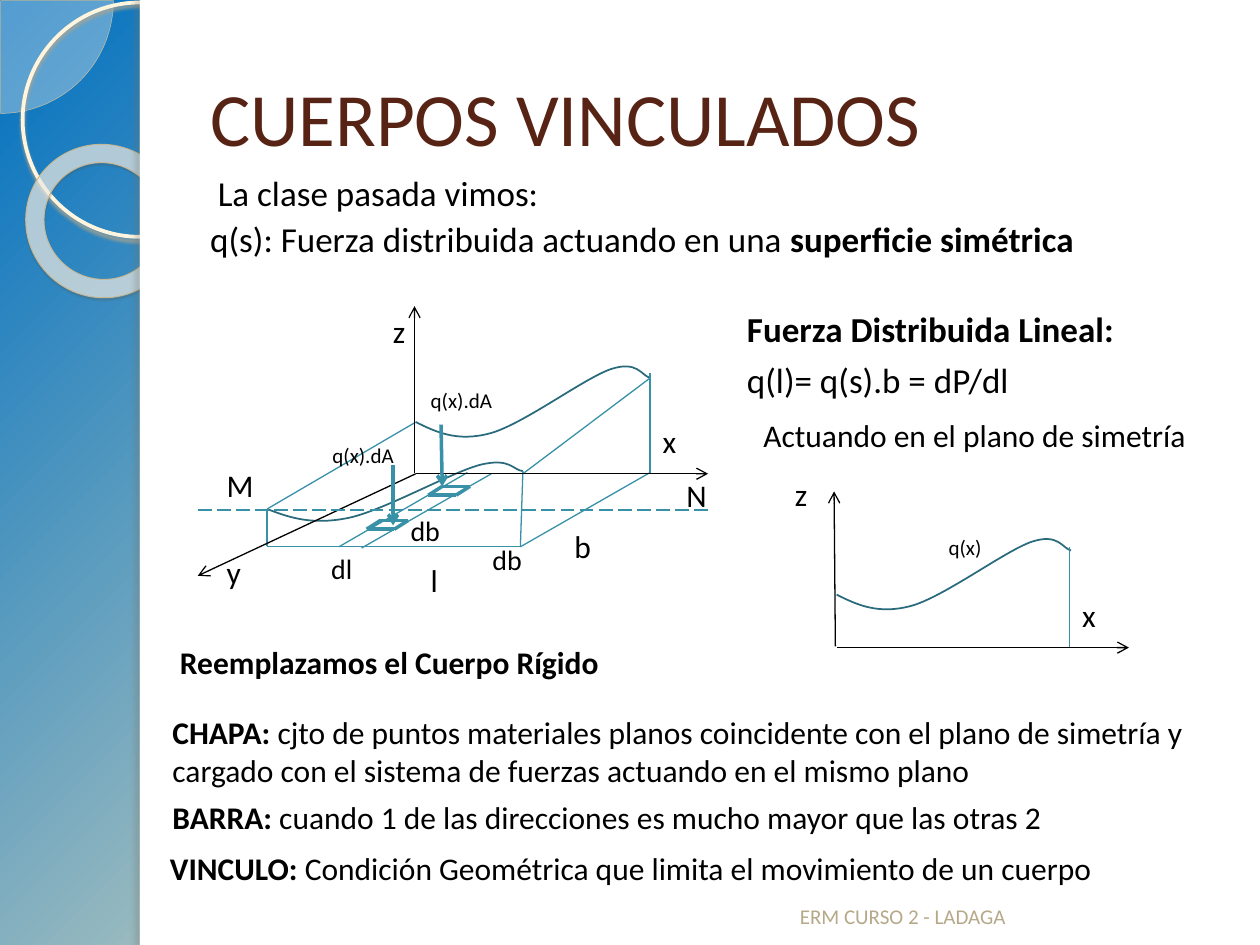
from pptx import Presentation
from pptx.dml.color import RGBColor
from pptx.enum.dml import MSO_LINE
from pptx.enum.shapes import MSO_CONNECTOR, MSO_SHAPE
from pptx.enum.text import MSO_ANCHOR, MSO_AUTO_SIZE
from pptx.oxml import parse_xml
from pptx.oxml.ns import nsdecls
from pptx.util import Inches, Pt

BLACK, TEAL, CURVE, WHITE = "000000", "3891A7", "296B7C", "FFFFFF"

# box, size, colour, left margin, space before, anchor, paragraphs of (text, bold) runs
TOP, MID, LOW = MSO_ANCHOR.TOP, MSO_ANCHOR.MIDDLE, MSO_ANCHOR.BOTTOM
TEXTS = [
    ((1.57, 0.3, 8.2, 1.25), 43, "572314", 0, 0, MID, [[("CUERPOS VINCULADOS", False)]]),
    ((1.13, 1.68, 7.87, 0.71), 20, BLACK, 0.44, 5.5, TOP, [
        [("q(s): Fuerza distribuida actuando en una ", False), ("superficie simétrica", True)]]),
    ((1.54, 1.31, 8.2, 0.55), 20, BLACK, 0.09, 6, TOP, [[("La clase pasada vimos:", False)]]),
    ((5.39, 2.39, 5.04, 1), 20, BLACK, 0.44, 5.5, TOP, [
        [("Fuerza Distribuida Lineal:", True)], [("q(l)= q(s).b = dP/dl", False)]]),
    ((6.25, 6.9, 3.17, 0.52), 12, "B6A98A", 0, 0, LOW, [[("ERM CURSO 2 - LADAGA", False)]]),
    ((0.83, 5.61, 8.82, 1), 18, BLACK, 0.44, 5.5, TOP, [
        [("CHAPA: ", True), ("cjto de puntos materiales planos coincidente con el plano de simetría "
                             "y cargado con el sistema de fuerzas actuando en el mismo plano", False)],
        [("BARRA:", True), (" cuando 1 de las direcciones es mucho mayor que las otras 2", False)]]),
    ((5.52, 3.25, 4.25, 0.47), 18, BLACK, 0.44, 5.5, TOP, [
        [("Actuando en el plano de simetría", False)]]),
    ((0.89, 5.05, 5.04, 0.55), 18, BLACK, 0.44, 5.5, TOP, [
        [("Reemplazamos el Cuerpo Rígido", True)]]),
    ((0.81, 6.69, 8.82, 1), 18, BLACK, 0.44, 5.5, TOP, [
        [("VINCULO: ", True), ("Condición Geométrica que limita el movimiento de un cuerpo", False)]]),
]

# size, width, height, then text, left, top of each label
LABELS = [
    (18, 0.55, 0.4, [("M", 1.7, 3.65), ("l", 3.32, 4.4), ("b", 4.46, 4.13)]),
    (18, 0.83, 0.46, [("y", 1.7, 4.34), ("z", 3.02, 2.43), ("N", 5.35, 3.73), ("z", 6.21, 3.72)]),
    (18, 0.61, 0.46, [("x", 5.16, 3.3), ("x", 8.49, 4.68)]),
    (16, 0.55, 0.37, [("dl", 2.53, 4.33), ("db", 3.16, 4.03), ("db", 3.81, 4.26)]),
    (12, 0.72, 0.3, [("q(x).dA", 2.54, 3.46), ("q(x).dA", 3.32, 3.03), ("q(x)", 7.43, 4.19)]),
]

# Bezier knots: a start, then three points for each piece
FRONT = [(2.12, 4.04), (2.3, 4.11), (2.48, 4.17), (2.77, 4.11), (3.05, 4.05), (3.58, 3.75),
         (3.81, 3.69), (4.05, 3.63), (4.07, 3.73), (4.15, 3.74)]
BACK = [(3.3, 3.35), (3.46, 3.43), (3.63, 3.51), (3.89, 3.44), (4.15, 3.37), (4.64, 3),
        (4.85, 2.93), (5.06, 2.86), (5.09, 2.98), (5.16, 3)]
# knots, top and height of the drawn curve, shift
CURVES = [(FRONT, 3.67, 0.46, 0, 0), (BACK, 2.91, 0.56, 0, 0), (BACK, 2.91, 0.56, 3.34, 1.37)]

EDGES = [
    (3.71, 3.75, 2.69, 4.34), (3.9, 3.76, 2.87, 4.35), (5.16, 3.75, 4.13, 4.34),
    (4.13, 4.34, 2.12, 4.34), (2.12, 4.33, 2.12, 4.04), (5.16, 3.76, 5.16, 2.96),
    (4.13, 4.34, 4.15, 3.74), (4.15, 3.76, 5.16, 3), (2.12, 4.04, 3.3, 3.35),
    (8.49, 5.14, 8.49, 4.34),
]
AXES = [
    (3.3, 3.76, 5.62, 3.76), (3.3, 3.76, 1.57, 4.57), (3.29, 3.75, 3.29, 2.43),
    (6.64, 5.14, 8.96, 5.14), (6.63, 5.13, 6.62, 3.9),
]
LOADS = [(3.12, 3.69, 3.12, 4.17), (3.5, 3.37, 3.51, 3.86)]
PATCHES = [(2.91, 4.2), (3.4, 3.93)]  # lower left corner of each dA
WIDE, SLANT, RISE = 0.22, 0.11, 0.07


def rgb(code):
    return RGBColor.from_string(code)


def add_text(slide, box, size, color, left, before, anchor, paras):
    frame = slide.shapes.add_textbox(*map(Inches, box)).text_frame
    frame.word_wrap = True
    frame.vertical_anchor = anchor
    for i, runs in enumerate(paras):
        para = frame.add_paragraph() if i else frame.paragraphs[0]
        para.space_before = Pt(before)
        para._p.get_or_add_pPr().set("marL", str(Inches(left)))
        for text, bold in runs:
            run = para.add_run()
            run.text = text
            font = run.font
            font.name, font.size, font.bold = "Calibri", Pt(size), bold
            font.color.rgb = rgb(color)
    return frame


def add_line(slide, ends, color=TEAL, width=0.75, arrow=False, dash=None):
    line = slide.shapes.add_connector(MSO_CONNECTOR.STRAIGHT, *map(Inches, ends))
    line.line.color.rgb = rgb(color)
    line.line.width = Pt(width)
    if dash:
        line.line.dash_style = dash
    if arrow:
        line.line._get_or_add_ln().append(
            parse_xml(f'<a:tailEnd {nsdecls("a")} type="arrow"/>'))
    line._element.spPr.append(parse_xml(f'<a:effectLst {nsdecls("a")}/>'))


def add_curve(slide, knots, top, height, dx, dy):
    """Draw Bezier pieces; the box follows the curve, not its handles."""
    points = [(Inches(x + dx), Inches(y + dy)) for x, y in knots]
    pen = slide.shapes.build_freeform(*points[0])
    pen.add_line_segments(points[1:], close=False)
    shape = pen.convert_to_shape()
    shape.top, shape.height = Inches(top + dy), Inches(height)
    trace = shape._element.spPr.find(".//{*}pathLst")[0]
    trace.set("h", str(shape.height))
    marks = [f'<a:pt x="{x - shape.left}" y="{y - shape.top}"/>' for x, y in points]
    for child in list(trace):
        trace.remove(child)
    trace.append(parse_xml(f'<a:moveTo {nsdecls("a")}>{marks[0]}</a:moveTo>'))
    for i in range(1, len(marks), 3):
        trace.append(parse_xml(
            f'<a:cubicBezTo {nsdecls("a")}>{"".join(marks[i:i + 3])}</a:cubicBezTo>'))
    shape.shadow.inherit = False
    shape.fill.background()
    shape.line.color.rgb = rgb(CURVE)
    shape.line.width = Pt(1)


def add_deco(slide, kind, box, fill=None, alpha=100, line=None, width=1, shade=None, adj=(), turn=0):
    """Add a preset shape; shade is (colour, alpha, blur, distance, angle)."""
    shape = slide.shapes.add_shape(kind, *map(Inches, box))
    shape.shadow.inherit = False
    shape.rotation = turn
    for i, value in enumerate(adj):
        shape.adjustments[i] = value
    if fill:
        shape.fill.solid()
        shape.fill.fore_color.rgb = rgb(fill)
        tone = shape._element.spPr.find(".//{*}solidFill/{*}srgbClr")
        tone.append(parse_xml(f'<a:alpha {nsdecls("a")} val="{alpha * 1000}"/>'))
    else:
        shape.fill.background()
    if line:
        shape.line.color.rgb = rgb(line)
        shape.line.width = Pt(width)
    else:
        shape.line.fill.background()
    if shade:
        color, clear, blur, dist, angle = shade
        shape._element.spPr.find("{*}effectLst").append(parse_xml(
            f'<a:outerShdw {nsdecls("a")} blurRad="{Pt(blur)}" dist="{Pt(dist)}" '
            f'dir="{angle * 60000}" rotWithShape="0"><a:srgbClr val="{color}">'
            f'<a:alpha val="{clear * 1000}"/></a:srgbClr></a:outerShdw>'))


def set_back(slide, stops):
    """Fill the background with a radial gradient."""
    slide.background.fill.solid()
    plain = slide._element.find(".//{*}bgPr/{*}solidFill")
    marks = "".join(f'<a:gs pos="{pos * 1000}"><a:srgbClr val="{color}"/></a:gs>'
                    for pos, color in stops)
    plain.getparent().replace(plain, parse_xml(
        f'<a:gradFill {nsdecls("a")} rotWithShape="1"><a:gsLst>{marks}</a:gsLst>'
        '<a:path path="circle"><a:fillToRect l="-24000" t="-20000" r="124000" b="120000"/>'
        '</a:path></a:gradFill>'))


def main():
    prs = Presentation()
    prs.slide_width, prs.slide_height = Inches(10), Inches(7.5)
    slide = prs.slides.add_slide(prs.slide_layouts[6])

    set_back(slide, [(0, "0070C0"), (82, "FFEBBE"), (100, "C9B484")])
    add_deco(slide, MSO_SHAPE.PIE, (-0.89, -0.89, 1.79, 1.79), "FEFAF4", 33, "D3C39F", 0.25,
             adj=(0, 54.02))
    add_deco(slide, MSO_SHAPE.OVAL, (0.18, 0.02, 1.86, 1.86), line="FFF5DE", width=2.15,
             shade=("B0A68F", 85, 2, 2, 90))
    add_deco(slide, MSO_SHAPE.DONUT, (0.2, 1.15, 1.23, 1.21), "FFFCF6", 63, "C7B893", 0.58,
             shade=("5A5444", 35, 1, 1.2, 75), adj=(0.12,), turn=38.6)
    add_deco(slide, MSO_SHAPE.RECTANGLE, (1.11, 0, 8.89, 7.5), WHITE)
    add_deco(slide, MSO_SHAPE.RECTANGLE, (1.11, 0, 0.08, 7.5), WHITE,
             shade=("736F63", 25, 3, 3, 180))

    for item in CURVES:
        add_curve(slide, *item)
    for ends in EDGES:
        add_line(slide, ends)
    for x, y in PATCHES:
        corners = [(x, y), (x + WIDE, y), (x + WIDE + SLANT, y - RISE), (x + SLANT, y - RISE)]
        for start, end in zip(corners, corners[1:] + corners[:1]):
            add_line(slide, start + end, width=2)
    for ends in AXES:
        add_line(slide, ends, BLACK, arrow=True)
    add_line(slide, (5.62, 4.05, 1.57, 4.05), width=1, dash=MSO_LINE.LONG_DASH)
    for ends in LOADS:
        add_line(slide, ends, width=2, arrow=True)

    for size, width, height, items in LABELS:
        for text, x, y in items:
            frame = add_text(slide, (x, y, width, height), size, BLACK, 0, 0, TOP, [[(text, False)]])
            frame.auto_size = MSO_AUTO_SIZE.SHAPE_TO_FIT_TEXT
    for item in TEXTS:
        add_text(slide, *item)
    prs.save("out.pptx")


if __name__ == "__main__":
    main()
